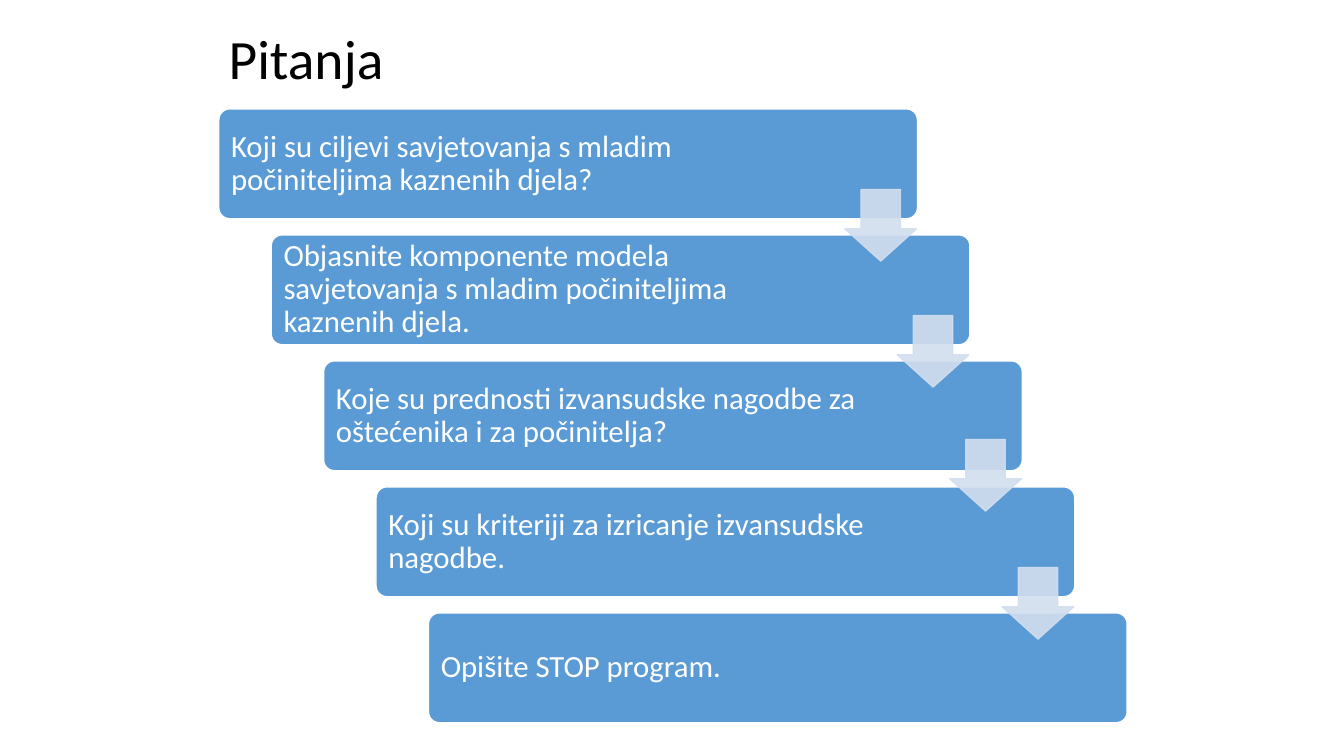
from dataclasses import dataclass

import lxml.etree
import pptx
import pptx.dml.color
import pptx.enum.shapes
import pptx.enum.text
import pptx.oxml.ns
import pptx.util

PX = 9144  # EMU per px, 100 px to the inch
FONT = "Calibri"
WHITE, BLACK, BLUE, PALE = "FFFFFF", "000000", "5B9BD5", "D2DEEF"

# Staircase geometry in px
LEFT, TOP = 217, 108
STEP_X, STEP_Y = 52, 125
BOX_W, BOX_H = 693, 109
ARROW_DX, ARROW_SIZE = 621, 71
INSET, RIGHT_INSET = 9, 135


@dataclass
class Question:
    text: str
    arrow_dy: int = 80


QUESTIONS = [
    Question("Koji su ciljevi savjetovanja s mladim počiniteljima kaznenih djela?"),
    Question("Objasnite komponente modela savjetovanja s mladim počiniteljima kaznenih djela."),
    Question("Koje su prednosti izvansudske nagodbe za oštećenika i za počinitelja?", 78),
    Question("Koji su kriteriji za izricanje izvansudske nagodbe."),
    Question("Opišite STOP program."),
]


def px(n: int) -> int:
    return pptx.util.Emu(n * PX)


def rgb(color: str) -> pptx.dml.color.RGBColor:
    return pptx.dml.color.RGBColor.from_string(color)


def write(sp, text: str, size: float, color: str) -> None:
    tf = sp.text_frame
    tf.word_wrap = True
    tf.vertical_anchor = pptx.enum.text.MSO_ANCHOR.MIDDLE
    tf.text = text
    p = tf.paragraphs[0]
    p.alignment = pptx.enum.text.PP_ALIGN.LEFT
    p.line_spacing = 0.9
    r = p.runs[0]
    r.font.name = FONT
    r.font.size = pptx.util.Pt(size)
    r.font.color.rgb = rgb(color)


def add_shape(s, kind, x: int, y: int, w: int, h: int, fill: str, line: str):
    sp = s.shapes.add_shape(kind, px(x), px(y), px(w), px(h))
    sp.shadow.inherit = False
    sp.fill.solid()
    sp.fill.fore_color.rgb = rgb(fill)
    sp.line.color.rgb = rgb(line)
    sp.line.width = pptx.util.Pt(1)
    return sp


def add_box(s, q: Question, x: int, y: int) -> None:
    kind = pptx.enum.shapes.MSO_SHAPE.ROUNDED_RECTANGLE
    sp = add_shape(s, kind, x, y, BOX_W, BOX_H, BLUE, WHITE)
    sp.adjustments[0] = 0.1
    tf = sp.text_frame
    tf.margin_left = tf.margin_top = tf.margin_bottom = px(INSET)
    tf.margin_right = px(RIGHT_INSET)
    write(sp, q.text, 22, WHITE)


def add_arrow(s, x: int, y: int) -> None:
    kind = pptx.enum.shapes.MSO_SHAPE.DOWN_ARROW
    sp = add_shape(s, kind, x, y, ARROW_SIZE, ARROW_SIZE, PALE, PALE)
    sp.adjustments[0] = 0.55
    sp.adjustments[1] = 0.45
    # 90 % opacity on both fill and outline
    qn = pptx.oxml.ns.qn
    for clr in sp._element.spPr.iter(qn("a:srgbClr")):
        lxml.etree.SubElement(clr, qn("a:alpha")).set("val", "90000")


def main() -> None:
    prs = pptx.Presentation()
    prs.slide_width, prs.slide_height = px(1333), px(750)
    s = prs.slides.add_slide(prs.slide_layouts[6])

    # Title
    write(s.shapes.add_textbox(px(217), px(30), px(900), px(62)), "Pitanja", 39.6, BLACK)

    # Question boxes, then the arrows that overlap them
    corners = [(LEFT + i * STEP_X, TOP + i * STEP_Y) for i in range(len(QUESTIONS))]
    for q, (x, y) in zip(QUESTIONS, corners):
        add_box(s, q, x, y)
    for q, (x, y) in zip(QUESTIONS[:-1], corners):
        add_arrow(s, x + ARROW_DX, y + q.arrow_dy)

    prs.save("out.pptx")


if __name__ == "__main__":
    main()
